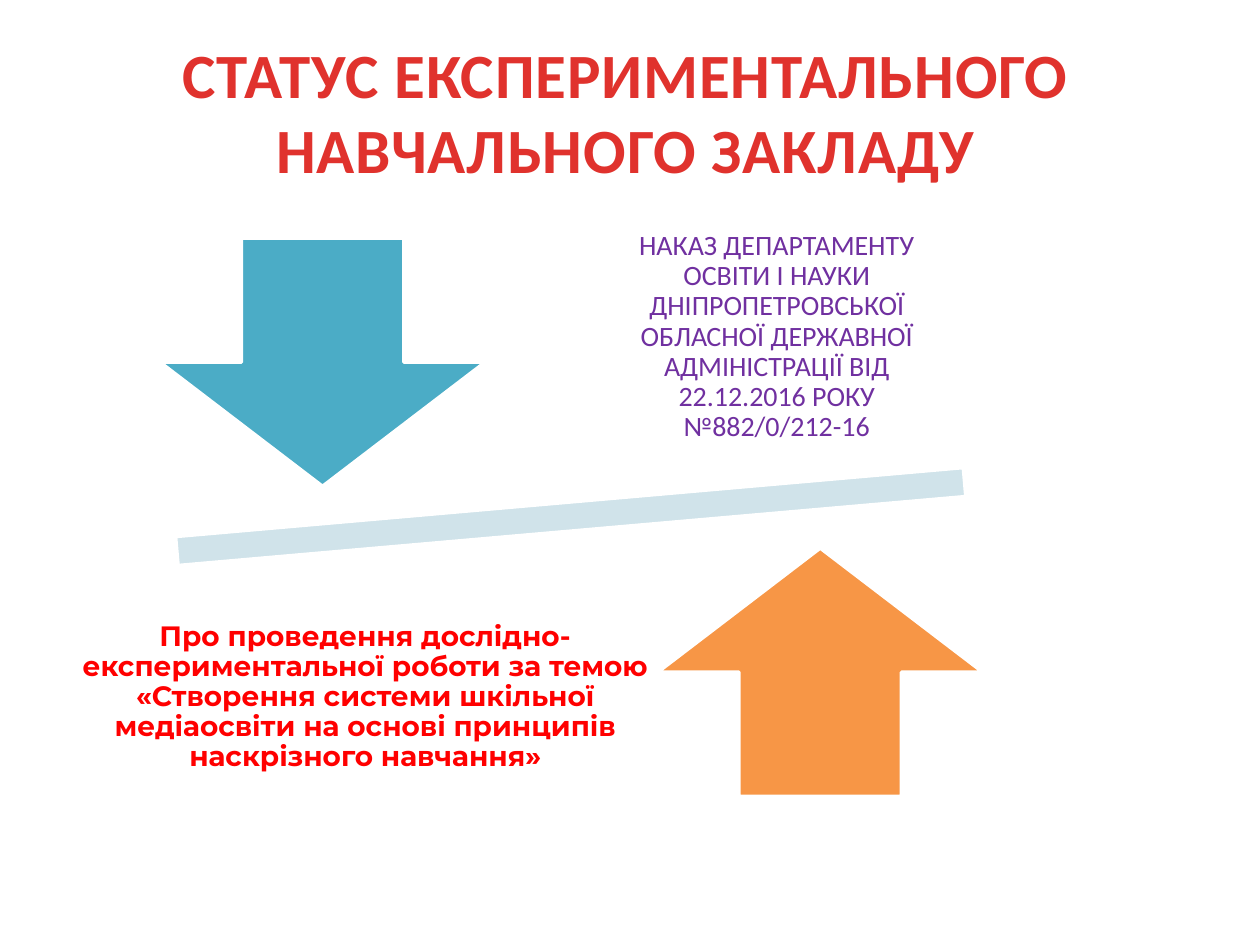
from pptx import Presentation
from pptx import util as u
from pptx.dml.color import RGBColor
from pptx.enum import shapes, text

SHAPE = shapes.MSO_SHAPE


def color(hex_value):
    return RGBColor.from_string(hex_value)


def add_text(box, lines, font_name, size, hex_color, bold):
    """Fill the box with centred paragraphs, one per line, and return their runs."""
    frame = box.text_frame
    runs = []
    for index, line in enumerate(lines):
        paragraph = frame.add_paragraph() if index else frame.paragraphs[0]
        paragraph.alignment = text.PP_ALIGN.CENTER
        run = paragraph.add_run()
        run.text = line
        run.font.name = font_name
        run.font.size = u.Pt(size)
        run.font.bold = bold
        run.font.color.rgb = color(hex_color)
        runs.append(run)
    return runs


presentation = Presentation()
presentation.slide_width = u.Inches(10)
presentation.slide_height = u.Inches(7.5)
slide = presentation.slides.add_slide(presentation.slide_layouts[6])

# Tilted bar between two opposing arrows
balance = [
    (SHAPE.MATH_MINUS, 0.26, 3.61, 8.54, 0.98, 355, "D0E3EA"),
    (SHAPE.DOWN_ARROW, 1.27, 1.89, 2.58, 1.97, 0, "4BACC6"),
    (SHAPE.UP_ARROW, 5.22, 4.35, 2.58, 1.97, 0, "F79646"),
]
for kind, left, top, width, height, rotation, fill in balance:
    shape = slide.shapes.add_shape(
        kind, u.Inches(left), u.Inches(top), u.Inches(width), u.Inches(height))
    shape.shadow.inherit = False
    shape.rotation = rotation
    shape.fill.solid()
    shape.fill.fore_color.rgb = color(fill)
    shape.line.color.rgb = color("FFFFFF")
    shape.line.width = u.Pt(2)

# Text beside each arrow
captions = [
    (4.79, 1.64, 2.75, "Calibri", "7030A0", False,
     "НАКАЗ ДЕПАРТАМЕНТУ ОСВІТИ І НАУКИ ДНІПРОПЕТРОВСЬКОЇ ОБЛАСНОЇ "
     "ДЕРЖАВНОЇ АДМІНІСТРАЦІЇ ВІД 22.12.2016 РОКУ №882/0/212-16"),
    (0.47, 4.5, 4.86, "Montserrat", "FF0000", True,
     "Про проведення дослідно-експериментальної роботи за темою «Створення "
     "системи шкільної медіаосвіти на основі принципів наскрізного навчання»"),
]
for left, top, width, font_name, hex_color, bold, caption in captions:
    box = slide.shapes.add_textbox(
        u.Inches(left), u.Inches(top), u.Inches(width), u.Inches(2.07))
    frame = box.text_frame
    frame.word_wrap = True
    frame.vertical_anchor = text.MSO_ANCHOR.MIDDLE
    frame.margin_left = frame.margin_right = u.Inches(0.12)
    frame.margin_top = frame.margin_bottom = u.Inches(0.12)
    add_text(box, [caption], font_name, 16, hex_color, bold)
    frame.paragraphs[0].line_spacing = 0.9

# Title
title = slide.shapes.add_textbox(
    u.Inches(1.25), u.Inches(0.23), u.Inches(7.43), u.Inches(1.31))
title.text_frame.word_wrap = False
title.text_frame.auto_size = text.MSO_AUTO_SIZE.SHAPE_TO_FIT_TEXT
title_lines = ["СТАТУС ЕКСПЕРИМЕНТАЛЬНОГО", "НАВЧАЛЬНОГО ЗАКЛАДУ"]
for run in add_text(title, title_lines, "Calibri", 36, "E0322D", True):
    run.font._element.set("spc", "50")  # letter spacing, 0.5 pt

presentation.save("out.pptx")
